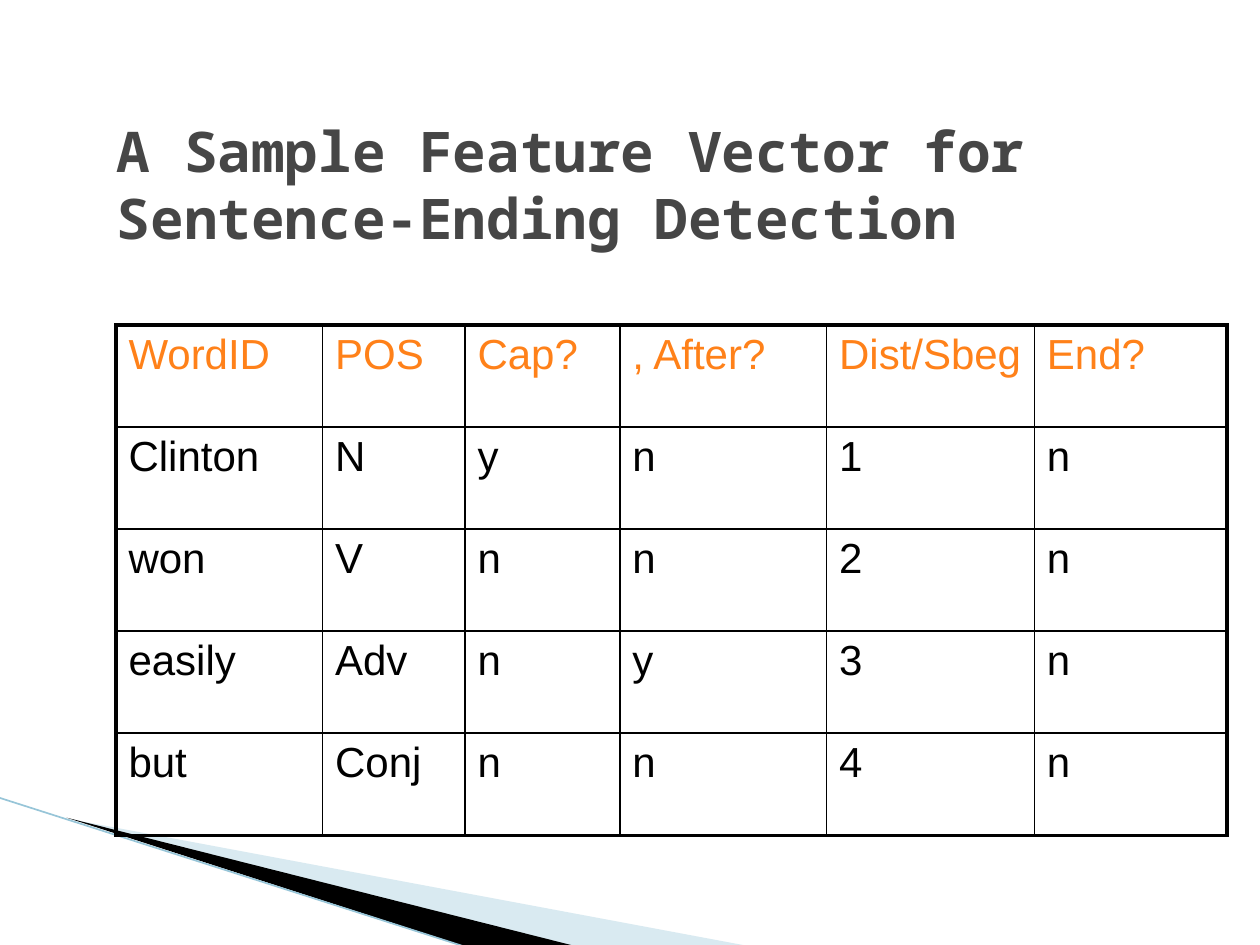
from lxml.etree import SubElement
from pptx import Presentation
from pptx.dml.color import RGBColor
from pptx.enum.shapes import MSO_CONNECTOR
from pptx.enum.text import MSO_ANCHOR
from pptx.oxml.ns import qn
from pptx.util import Inches, Pt

WIDTHS = [1.64, 1.13, 1.23, 1.64, 1.65, 1.53]
ROW = 0.81
ROWS = [
    ["WordID", "POS", "Cap?", ", After?", "Dist/Sbeg", "End?"],
    ["Clinton", "N", "y", "n", "1", "n"],
    ["won", "V", "n", "n", "2", "n"],
    ["easily", "Adv", "n", "y", "3", "n"],
    ["but", "Conj", "n", "n", "4", "n"],
]


def paint(color, code):
    color.rgb = RGBColor.from_string(code)


def edge(cell, side, width):
    """Draw one black border; side is L, R, T or B."""
    line = SubElement(cell._tc.get_or_add_tcPr(), qn(f"a:ln{side}"), w=str(Pt(width)))
    fill = SubElement(line, qn("a:solidFill"))
    SubElement(fill, qn("a:srgbClr"), val="000000")


class Deck:
    """Holds the text style and the current slide."""

    head_font, body_font = "Noto Sans Mono", "Arial"
    ink, gray, orange = "000000", "464646", "FF8119"
    thin, thick = 1, 2.25

    def __init__(self):
        self.file = Presentation()
        self.file.slide_width, self.file.slide_height = Inches(10), Inches(7.5)
        self.slide = self.file.slides.add_slide(self.file.slide_layouts[6])
        self.shapes = self.slide.shapes

    def text(self, para, words, font, size, color, bold=False):
        run = para.add_run()
        run.text = words
        run.font.name, run.font.size, run.font.bold = font, Pt(size), bold
        paint(run.font.color, color)

    def wedge(self, points, color, alpha=100):
        start, *rest = [(Inches(x), Inches(y)) for x, y in points]
        outline = self.shapes.build_freeform(*start)
        outline.add_line_segments(rest, close=True)
        shape = outline.convert_to_shape()
        shape.shadow.inherit = False
        shape.line.fill.background()
        shape.fill.solid()
        paint(shape.fill.fore_color, color)
        if alpha < 100:
            tone = shape._element.spPr.find(f".//{qn('a:srgbClr')}")
            SubElement(tone, qn("a:alpha"), val=str(alpha * 1000))

    def line(self, start, end, color, width):
        ends = [Inches(n) for n in (*start, *end)]
        line = self.shapes.add_connector(MSO_CONNECTOR.STRAIGHT, *ends)
        line.line.width = Pt(width)
        paint(line.line.color, color)
        SubElement(line._element.spPr, qn("a:effectLst"))

    def title(self, words, *place):
        frame = self.shapes.add_textbox(*map(Inches, place)).text_frame
        frame.word_wrap = True
        frame.vertical_anchor = MSO_ANCHOR.MIDDLE
        self.text(frame.paragraphs[0], words, self.head_font, 32, self.gray, True)

    def table(self, rows, widths, height, left, top):
        size = len(rows), len(widths)
        place = left, top, sum(widths), height * len(rows)
        grid = self.shapes.add_table(*size, *map(Inches, place)).table
        grid.first_row = grid.horz_banding = False
        for col, width in zip(grid.columns, widths):
            col.width = Inches(width)
        for r, row in enumerate(rows):
            for c, words in enumerate(row):
                cell = grid.cell(r, c)
                outer = {"L": c == 0, "R": c == size[1] - 1,
                         "T": r == 0, "B": r == size[0] - 1}
                for side, rim in outer.items():
                    edge(cell, side, self.thick if rim else self.thin)
                cell.fill.background()
                color = self.ink if r else self.orange
                self.text(cell.text_frame.paragraphs[0], words,
                          self.body_font, 24, color)


def main():
    deck = Deck()
    deck.wedge([(0.55, 6.5), (5.95, 7.51), (4.56, 7.51)], "A0CBDC", 40)
    deck.wedge([(0.53, 6.49), (4.57, 7.51), (3.72, 7.52)], deck.ink)
    deck.line((-0.01, 6.33), (3.71, 7.52), "97C5D8", 0.95)
    deck.title("A Sample Feature Vector for Sentence-Ending Detection",
               0.83, 0.83, 8.67, 1.25)
    deck.table(ROWS, WIDTHS, ROW, 0.92, 2.58)
    deck.file.save("out.pptx")


if __name__ == "__main__":
    main()
